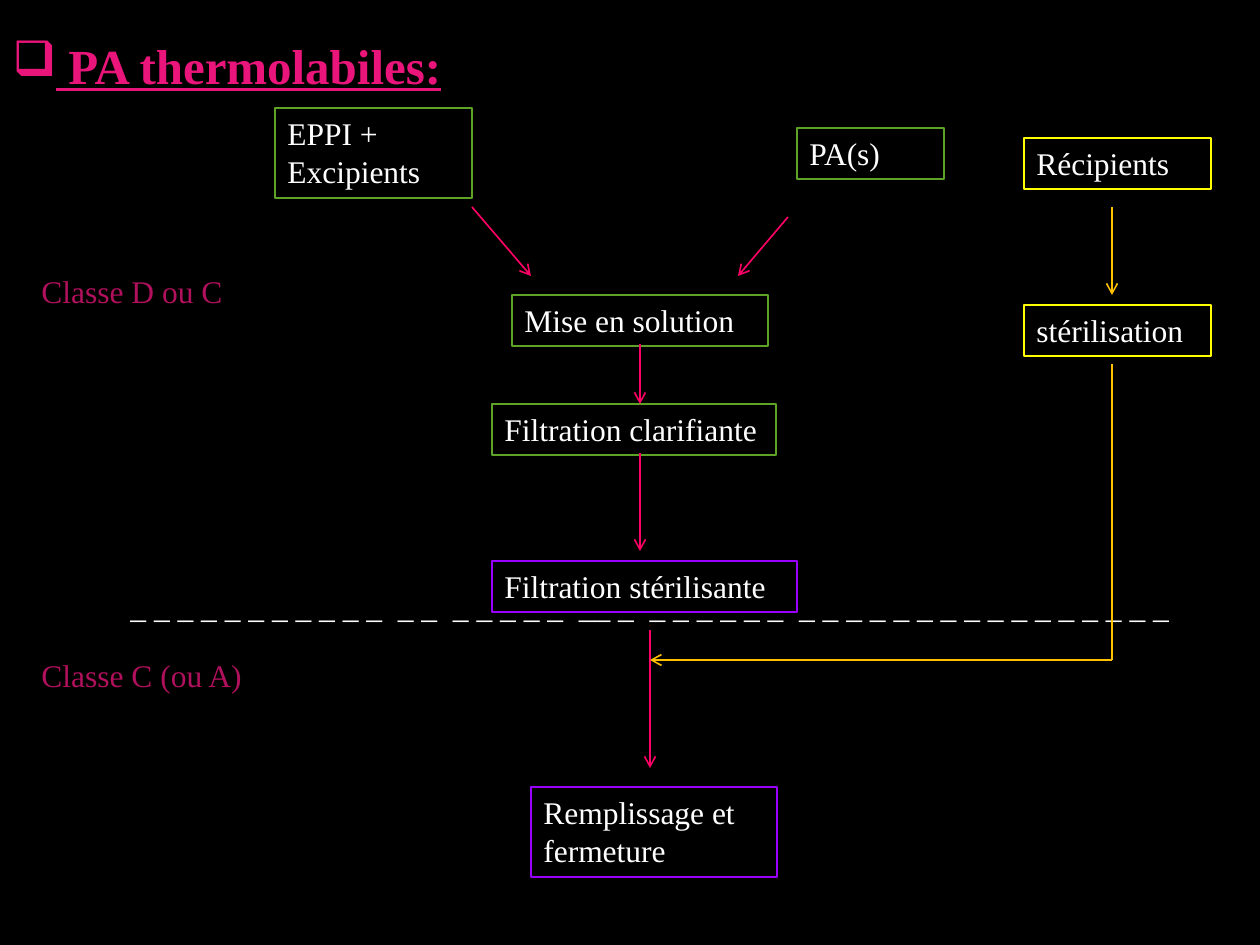
from lxml import etree
from pptx import Presentation
from pptx.dml.color import RGBColor
from pptx.enum.shapes import MSO_CONNECTOR, MSO_SHAPE
from pptx.enum.text import MSO_ANCHOR, MSO_AUTO_SIZE, PP_ALIGN
from pptx.oxml.ns import qn
from pptx.util import Emu, Pt

STRAIGHT = MSO_CONNECTOR.STRAIGHT
RECTANGLE = MSO_SHAPE.RECTANGLE
TOP = MSO_ANCHOR.TOP
LEFT = PP_ALIGN.LEFT
FIT_SHAPE = MSO_AUTO_SIZE.SHAPE_TO_FIT_TEXT
NO_FIT = MSO_AUTO_SIZE.NONE

BLACK = RGBColor(0x00, 0x00, 0x00)
WHITE = RGBColor(0xFF, 0xFF, 0xFF)
GREEN = RGBColor(0x5F, 0xA3, 0x26)
PURPLE = RGBColor(0x99, 0x00, 0xFF)
YELLOW = RGBColor(0xFF, 0xFF, 0x00)
AMBER = RGBColor(0xFF, 0xC0, 0x00)
PINK = RGBColor(0xFF, 0x00, 0x66)
TITLE_PINK = RGBColor(0xEA, 0x15, 0x7A)
CLASS_PINK = RGBColor(0xB0, 0x10, 0x5C)

FONT = "Times New Roman"
PX = 914400 / 126
ONE_LINE, TWO_LINES = 51, 90

TITLE = " PA thermolabiles:"
TITLE_BOX = (0, 29, 610, 72)

# text, left, top, width, height, border, wraps
STEPS = [
    ("EPPI + Excipients", 275, 108, 197, TWO_LINES, GREEN, True),
    ("PA(s)", 797, 128, 147, ONE_LINE, GREEN, True),
    ("Mise en solution", 512, 295, 256, ONE_LINE, GREEN, True),
    ("Filtration clarifiante", 492, 404, 284, ONE_LINE, GREEN, False),
    ("Filtration stérilisante", 492, 561, 305, ONE_LINE, PURPLE, True),
    ("Remplissage et fermeture", 531, 787, 246, TWO_LINES, PURPLE, True),
    ("Récipients", 1024, 138, 187, ONE_LINE, YELLOW, True),
    ("stérilisation", 1024, 305, 187, ONE_LINE, YELLOW, True),
]

# text, left, top, width, colour
LABELS = [
    ("_ _ _ _ _ _ _ _ _ _ _  _ _  _ _ _ _ _  __ _  _ _ _ _ _ _  "
     "_ _ _ _ _ _ _ _ _ _ _ _ _ _ _ _", 118, 581, 1092, WHITE),
    ("Classe D ou C", 29, 266, 207, CLASS_PINK),
    ("Classe C (ou A)", 29, 650, 246, CLASS_PINK),
]

# start x, start y, end x, end y, colour, has arrowhead
FLOWS = [
    (472, 207, 531, 276, PINK, True),
    (788, 217, 738, 276, PINK, True),
    (640, 344, 640, 404, PINK, True),
    (640, 453, 640, 551, PINK, True),
    (650, 630, 650, 768, PINK, True),
    (1112, 207, 1112, 295, AMBER, True),
    (1112, 364, 1112, 660, AMBER, False),
    (1112, 660, 650, 660, AMBER, True),
]


def emu(*lengths):
    return [Emu(round(length * PX)) for length in lengths]


def write(shape, text, colour, size=18, wraps=True, fit=FIT_SHAPE):
    frame = shape.text_frame
    frame.word_wrap = wraps
    frame.auto_size = fit
    frame.vertical_anchor = TOP
    paragraph = frame.paragraphs[0]
    paragraph.text = text
    paragraph.alignment = LEFT
    paragraph.font.name = FONT
    paragraph.font.size = Pt(size)
    paragraph.font.color.rgb = colour
    return paragraph


def add_title(slide):
    title = slide.shapes.title
    title.left, title.top, title.width, title.height = emu(*TITLE_BOX)
    paragraph = write(title, TITLE, TITLE_PINK, size=28, fit=NO_FIT)
    paragraph.font.bold = True
    paragraph.font.underline = True
    paragraph.line_spacing = 1.0
    paragraph.space_before = Pt(0)
    properties = paragraph._p.get_or_add_pPr()
    properties.set("marL", "0")
    properties.set("indent", "0")
    bullet = etree.Element(qn("a:buChar"), char="❑")
    properties.find(qn("a:spcBef")).addnext(bullet)


def add_step(slide, text, left, top, width, height, border, wraps):
    step = slide.shapes.add_shape(RECTANGLE, *emu(left, top, width, height))
    step.shadow.inherit = False
    step.fill.background()
    step.line.color.rgb = border
    step.line.width = Pt(0.75)
    write(step, text, WHITE, wraps=wraps)


def add_label(slide, text, left, top, width, colour):
    label = slide.shapes.add_textbox(*emu(left, top, width, ONE_LINE))
    write(label, text, colour)


def add_flow(slide, x1, y1, x2, y2, colour, has_arrowhead):
    flow = slide.shapes.add_connector(STRAIGHT, *emu(x1, y1, x2, y2))
    flow.line.color.rgb = colour
    flow.line.width = Pt(0.94)
    if has_arrowhead:
        etree.SubElement(flow.line._get_or_add_ln(), qn("a:tailEnd"), type="arrow")
    etree.SubElement(flow._element.spPr, qn("a:effectLst"))


def main():
    deck = Presentation()
    deck.slide_width, deck.slide_height = emu(1260, 945)
    slide = deck.slides.add_slide(deck.slide_layouts[5])
    slide.background.fill.solid()
    slide.background.fill.fore_color.rgb = BLACK
    add_title(slide)
    for step in STEPS:
        add_step(slide, *step)
    for label in LABELS:
        add_label(slide, *label)
    for flow in FLOWS:
        add_flow(slide, *flow)
    deck.save("out.pptx")


if __name__ == "__main__":
    main()
